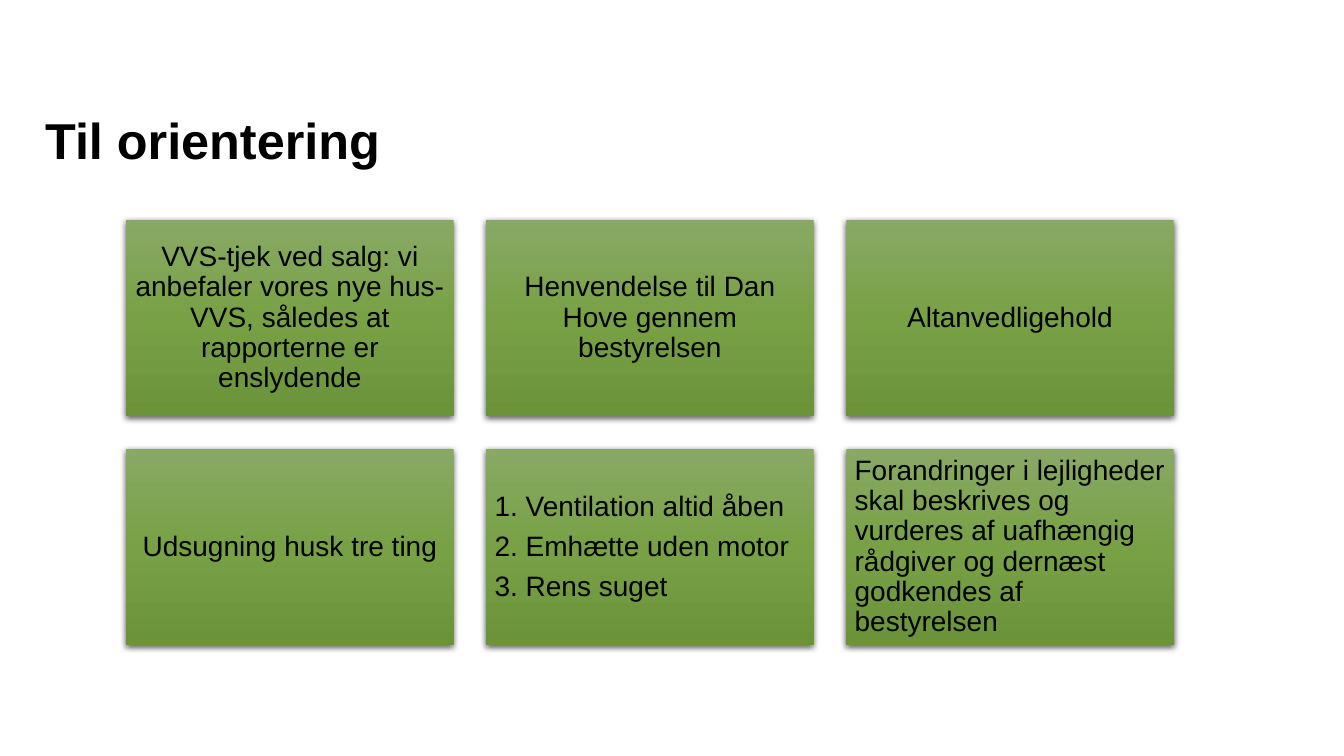
from lxml import etree
from pptx import Presentation
from pptx.dml.color import RGBColor
from pptx.enum.shapes import MSO_SHAPE
from pptx.enum.text import MSO_ANCHOR, PP_ALIGN
from pptx.oxml import parse_xml
from pptx.oxml.ns import qn
from pptx.util import Cm, Pt

RECTANGLE = MSO_SHAPE.RECTANGLE
TOP, MIDDLE = MSO_ANCHOR.TOP, MSO_ANCHOR.MIDDLE
LEFT, CENTER = PP_ALIGN.LEFT, PP_ALIGN.CENTER
NAMESPACE = "http://schemas.openxmlformats.org/drawingml/2006/main"

GREENS = [(0, "88A964"), (50, "78A146"), (100, "6B933A")]
TITLE_FONT = {"name": "Arial", "size": Pt(36), "bold": True}
CARD_FONT = {"name": "Arial", "size": Pt(20), "bold": False}
TITLE_SPACING = {"alignment": LEFT, "line_spacing": 0.97}
CARD_SPACING = {"line_spacing": 0.9, "space_after": Pt(7)}

CARDS = [
    (CENTER, ["VVS-tjek ved salg: vi anbefaler vores nye hus-VVS, "
              "således at rapporterne er enslydende"]),
    (CENTER, ["Henvendelse til Dan Hove gennem bestyrelsen"]),
    (CENTER, ["Altanvedligehold"]),
    (CENTER, ["Udsugning husk tre ting"]),
    (LEFT, ["1. Ventilation altid åben", "2. Emhætte uden motor", "3. Rens suget"]),
    (LEFT, ["Forandringer i lejligheder skal beskrives og vurderes af uafhængig "
            "rådgiver og dernæst godkendes af bestyrelsen"]),
]


def color(value):
    """Turn a hex string into a colour."""
    return RGBColor.from_string(value)


def set_values(target, values):
    """Set each named attribute of the target."""
    for name, value in values.items():
        setattr(target, name, value)


def write_text(box, lines, font, spacing, anchor, inset):
    """Write the lines as paragraphs of the box."""
    frame = box.text_frame
    set_values(frame, {"word_wrap": True, "vertical_anchor": anchor})
    for side in ("left", "top", "right", "bottom"):
        setattr(frame, f"margin_{side}", inset)
    for index, line in enumerate(lines):
        para = frame.add_paragraph() if index else frame.paragraphs[0]
        set_values(para, spacing)
        span = para.add_run()
        span.text = line
        set_values(span.font, font)
        span.font.color.rgb = color("000000")


def shade(box):
    """Give the box its green gradient and soft shadow."""
    box.fill.gradient()
    box.fill.gradient_angle = 270
    properties = box.fill._xPr
    stops = properties.find(".//" + qn("a:gsLst"))
    for stop in list(stops):
        stops.remove(stop)
    for percent, value in GREENS:
        stop = etree.SubElement(stops, qn("a:gs"), pos=str(percent * 1000))
        etree.SubElement(stop, qn("a:srgbClr"), val=value)
    box.line.fill.background()
    box.shadow.inherit = False
    properties.find(qn("a:effectLst")).append(parse_xml(
        f'<a:outerShdw xmlns:a="{NAMESPACE}" blurRad="{Pt(4.5)}" dist="{Pt(1.5)}" '
        'dir="5400000" algn="ctr" rotWithShape="0"><a:srgbClr val="000000">'
        '<a:alpha val="63000"/></a:srgbClr></a:outerShdw>'))


def add_title(page, left, top, width, height):
    """Place the heading in the given box."""
    box = page.shapes.add_textbox(left, top, width, height)
    write_text(box, ["Til orientering"], TITLE_FONT, TITLE_SPACING, TOP, 0)


def add_cards(page, left, top, width, height, columns=3, rows=2, gap=Cm(0.82)):
    """Fill the given box with a grid of cards."""
    card_width = (width - gap * (columns - 1)) // columns
    card_height = (height - gap * (rows - 1)) // rows
    for index, (alignment, lines) in enumerate(CARDS):
        row, column = divmod(index, columns)
        box = page.shapes.add_shape(
            RECTANGLE, left + column * (card_width + gap),
            top + row * (card_height + gap), card_width, card_height)
        shade(box)
        spacing = {**CARD_SPACING, "alignment": alignment}
        write_text(box, lines, CARD_FONT, spacing, MIDDLE, Cm(0.21))


def main():
    """Build the slide and save the deck."""
    deck = Presentation()
    set_values(deck, {"slide_width": Cm(33.87), "slide_height": Cm(19.05)})
    page = deck.slides.add_slide(deck.slide_layouts[6])
    add_title(page, Cm(1.14), Cm(2.84), Cm(30.45), Cm(1.85))
    add_cards(page, Cm(3.18), Cm(5.54), Cm(26.4), Cm(10.72))
    deck.save("out.pptx")


if __name__ == "__main__":
    main()
